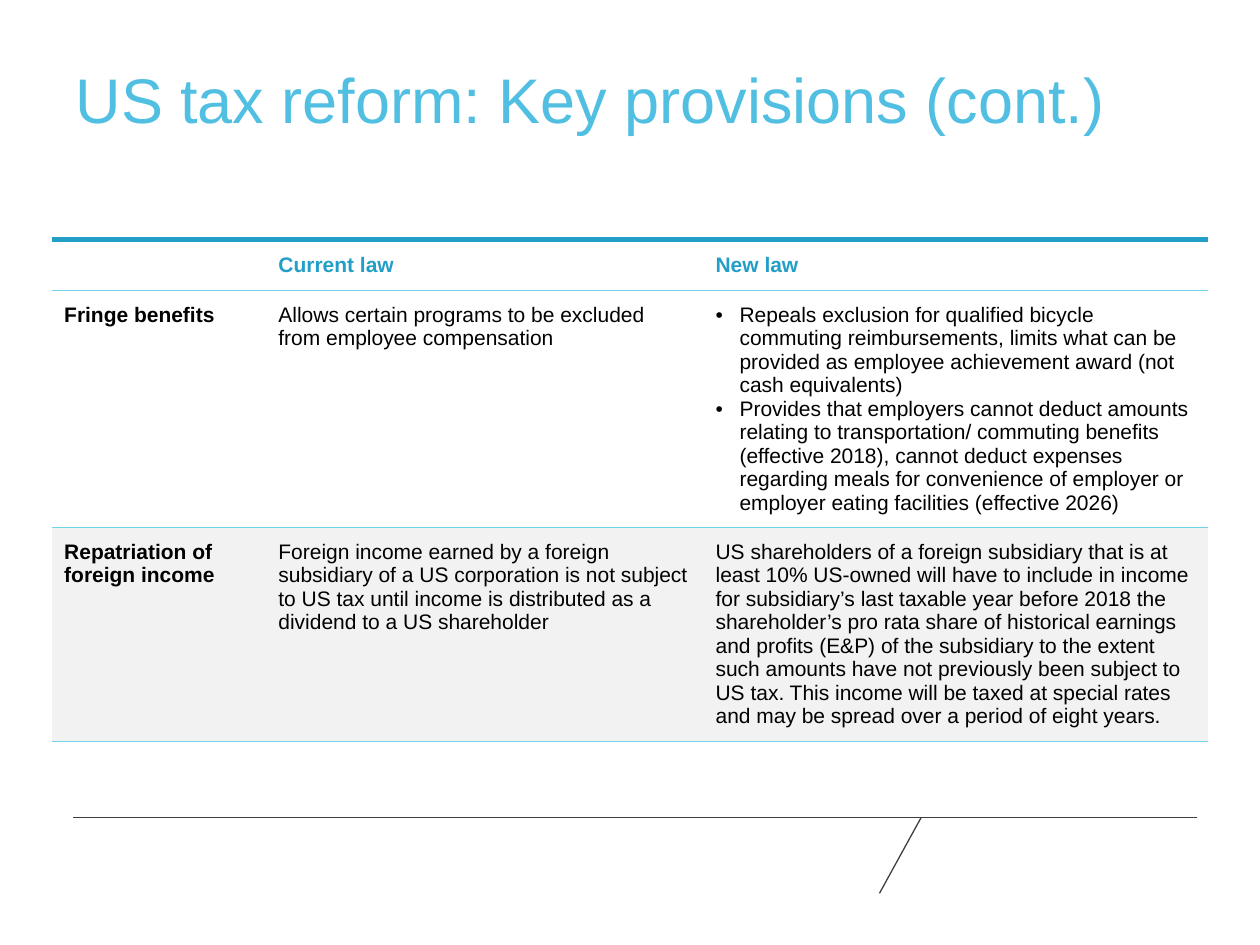
from lxml import etree
from pptx import Presentation
from pptx.dml.color import RGBColor
from pptx.enum.shapes import MSO_CONNECTOR
from pptx.enum.text import MSO_ANCHOR, PP_ALIGN
from pptx.oxml.ns import qn
from pptx.util import Inches, Pt

STRAIGHT = MSO_CONNECTOR.STRAIGHT
TOP, MIDDLE = MSO_ANCHOR.TOP, MSO_ANCHOR.MIDDLE
LEFT = PP_ALIGN.LEFT

SKY = RGBColor(0x51, 0xBF, 0xE1)
TEAL = RGBColor(0x23, 0x9F, 0xC7)
AQUA = RGBColor(0x71, 0xD4, 0xE8)
CHARCOAL = RGBColor(0x3F, 0x3F, 0x42)
BLACK = RGBColor(0, 0, 0)
WHITE = RGBColor(0xFF, 0xFF, 0xFF)
PALE_GRAY = RGBColor(0xF2, 0xF2, 0xF2)

COLUMN_WIDTHS = (1.7, 3.47, 4.01)
ROW_HEIGHTS = (0.4, 1.87, 1.7)
HEADINGS = ("", "Current law", "New law")
PROVISIONS = (
    (
        "Fringe benefits",
        "Allows certain programs to be excluded from employee compensation",
        (
            "Repeals exclusion for qualified bicycle commuting reimbursements, limits what "
            "can be provided as employee achievement award (not cash equivalents)",
            "Provides that employers cannot deduct amounts relating to transportation/ "
            "commuting benefits (effective 2018), cannot deduct expenses regarding meals for "
            "convenience of employer or employer eating facilities (effective 2026)",
        ),
    ),
    (
        "Repatriation of foreign income",
        "Foreign income earned by a foreign subsidiary of a US corporation is not subject "
        "to US tax until income is distributed as a dividend to a US shareholder",
        "US shareholders of a foreign subsidiary that is at least 10% US-owned will have to "
        "include in income for subsidiary’s last taxable year before 2018 the shareholder’s "
        "pro rata share of historical earnings and profits (E&P) of the subsidiary to the "
        "extent such amounts have not previously been subject to US tax. This income will be "
        "taxed at special rates and may be spread over a period of eight years.",
    ),
)


def add_bullet(paragraph):
    """Give a paragraph a hanging round bullet."""
    properties = paragraph._p.get_or_add_pPr()
    properties.set("marL", str(Inches(0.19)))
    properties.set("indent", str(-Inches(0.19)))
    etree.SubElement(properties, qn("a:buFont"), typeface="Arial")
    etree.SubElement(properties, qn("a:buChar"), char="•")


def write_text(frame, content, size=12, color=BLACK, bold=False, line_spacing=None):
    """Write a string, or a tuple of strings as bullets, into a text frame."""
    bulleted = isinstance(content, tuple)
    for index, text in enumerate(content if bulleted else (content,)):
        paragraph = frame.add_paragraph() if index else frame.paragraphs[0]
        if bulleted:
            add_bullet(paragraph)
        paragraph.alignment = LEFT
        if line_spacing:
            paragraph.line_spacing = line_spacing
        run = paragraph.add_run()
        run.text = text
        run.font.name = "Arial"
        run.font.size = Pt(size)
        run.font.bold = bold
        run.font.color.rgb = color


def set_borders(cell, top_color, top_width):
    """Rule a cell above and below and leave its sides open."""
    rules = (
        ("lnL", None, 0),
        ("lnR", None, 0),
        ("lnT", top_color, top_width),
        ("lnB", AQUA, 0.5),
    )
    properties = cell._tc.get_or_add_tcPr()
    for position, (tag, color, width) in enumerate(rules):
        border = etree.Element(qn(f"a:{tag}"), w=str(Pt(width)))
        if color is None:
            etree.SubElement(border, qn("a:noFill"))
        else:
            fill = etree.SubElement(border, qn("a:solidFill"))
            etree.SubElement(fill, qn("a:srgbClr"), val=str(color))
        properties.insert(position, border)


def format_cell(cell, content, fill=None, anchor=TOP, top_rule=(AQUA, 0.5), **text_format):
    """Fill and rule one table cell, and write its text if it has any."""
    if fill is None:
        cell.fill.background()
    else:
        cell.fill.solid()
        cell.fill.fore_color.rgb = fill
    set_borders(cell, *top_rule)
    if content:
        cell.margin_left = cell.margin_right = Inches(0.1)
        cell.margin_top = cell.margin_bottom = Inches(0.1)
        cell.vertical_anchor = anchor
        write_text(cell.text_frame, content, **text_format)


def add_title(slide, text):
    """Place and format the slide title."""
    title = slide.shapes.title
    title.left, title.top = Inches(0.5), Inches(0.5)
    title.width, title.height = Inches(9.09), Inches(1.16)
    title.text_frame.vertical_anchor = TOP
    title.text_frame.word_wrap = True
    write_text(title.text_frame, text, size=36, color=SKY, line_spacing=0.9)


def add_provisions_table(slide):
    """Add the table comparing current and new law."""
    table = slide.shapes.add_table(
        len(ROW_HEIGHTS), len(COLUMN_WIDTHS), Inches(0.41), Inches(1.9),
        Inches(sum(COLUMN_WIDTHS)), Inches(sum(ROW_HEIGHTS)),
    ).table
    table.first_row = table.horz_banding = False
    for column, width in zip(table.columns, COLUMN_WIDTHS):
        column.width = Inches(width)
    for row, height in zip(table.rows, ROW_HEIGHTS):
        row.height = Inches(height)

    for column, heading in enumerate(HEADINGS):
        format_cell(table.cell(0, column), heading, anchor=MIDDLE,
                    top_rule=(TEAL, 3), color=TEAL, bold=True)
    for row, (provision, fill) in enumerate(zip(PROVISIONS, (WHITE, PALE_GRAY)), 1):
        for column, content in enumerate(provision):
            format_cell(table.cell(row, column), content, fill=fill, bold=column == 0)


def add_rule(slide, x1, y1, x2, y2):
    """Draw a thin straight footer line."""
    rule = slide.shapes.add_connector(
        STRAIGHT, Inches(x1), Inches(y1), Inches(x2), Inches(y2)
    )
    rule.line.color.rgb = CHARCOAL
    rule.line.width = Pt(0.75)
    etree.SubElement(rule._element.spPr, qn("a:effectLst"))


def main():
    """Build and save the slide."""
    presentation = Presentation()
    presentation.slide_width, presentation.slide_height = Inches(10), Inches(7.5)
    slide = presentation.slides.add_slide(presentation.slide_layouts[5])
    add_rule(slide, 0.58, 6.49, 9.5, 6.49)
    add_rule(slide, 6.98, 7.09, 7.31, 6.49)
    add_title(slide, "US tax reform: Key provisions (cont.)")
    add_provisions_table(slide)
    presentation.save("out.pptx")


if __name__ == "__main__":
    main()
